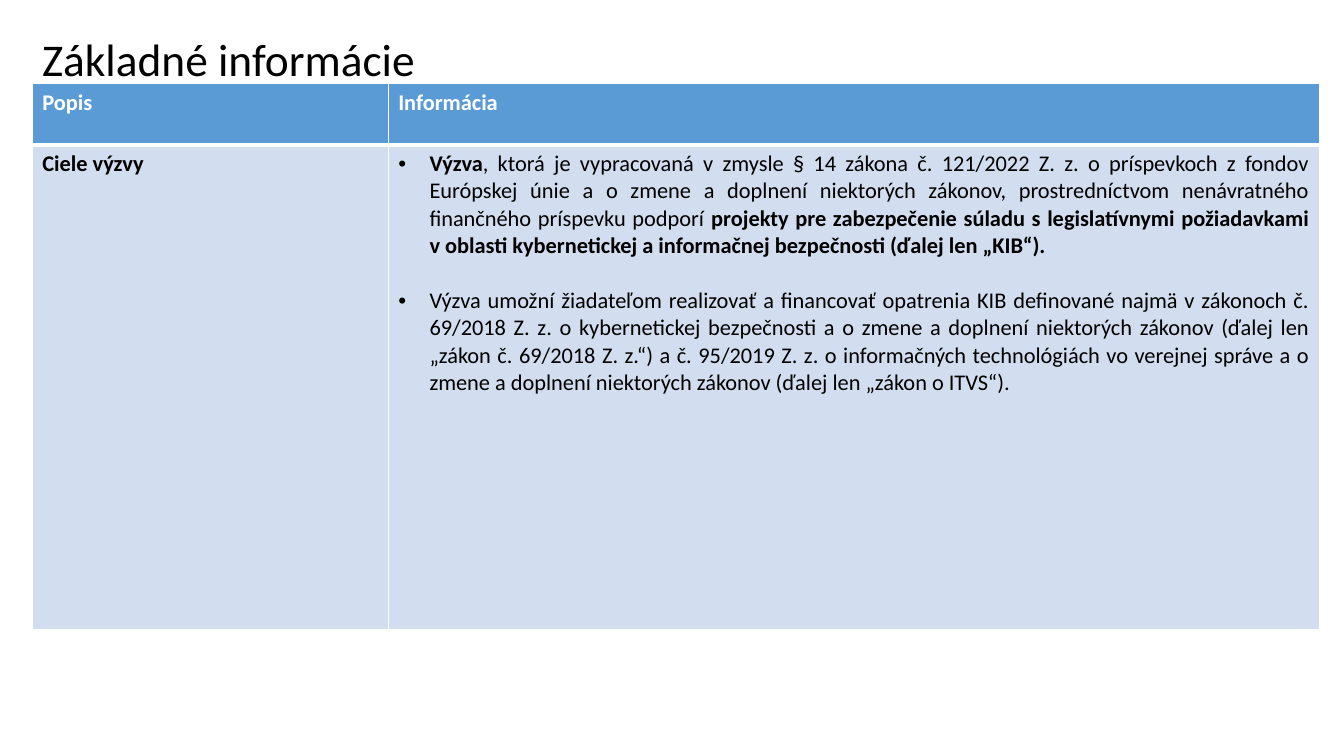
from lxml import etree
from pptx import Presentation
from pptx.dml.color import RGBColor
from pptx.enum.text import MSO_ANCHOR, PP_ALIGN
from pptx.oxml.ns import qn
from pptx.util import Pt

PX = 9144  # 100 px to the inch
LEFT, JUSTIFY = PP_ALIGN.LEFT, PP_ALIGN.JUSTIFY
MIDDLE = MSO_ANCHOR.MIDDLE
COLORS = {"text": "000000", "white": "FFFFFF", "header": "5B9BD5", "body": "D2DEEF"}

HEADINGS = ["Popis", "Informácia"]
TOPIC = "Ciele výzvy"
GOALS = [
    [
        ("Výzva", True),
        (", ktorá je vypracovaná v zmysle § 14 zákona č. 121/2022 Z. z. o príspevkoch "
         "z fondov Európskej únie a o zmene a doplnení niektorých zákonov, "
         "prostredníctvom nenávratného finančného príspevku podporí ", False),
        ("projekty pre zabezpečenie súladu s legislatívnymi požiadavkami v oblasti "
         "kybernetickej a informačnej bezpečnosti (ďalej len „KIB“).", True),
    ],
    [
        ("Výzva umožní žiadateľom realizovať a financovať opatrenia KIB definované "
         "najmä v zákonoch č. 69/2018 Z. z. o kybernetickej bezpečnosti a o zmene "
         "a doplnení niektorých zákonov (ďalej len „zákon č. 69/2018 Z. z.“) "
         "a č. 95/2019 Z. z. o informačných technológiách vo verejnej správe "
         "a o zmene a doplnení niektorých zákonov (ďalej len „zákon o ITVS“).", False),
    ],
]


class Deck:
    font = "Calibri"

    def __init__(self, width, height):
        self.prs = Presentation()
        self.prs.slide_width, self.prs.slide_height = width * PX, height * PX
        self.s = self.prs.slides.add_slide(self.prs.slide_layouts[6])

    def add_text(self, p, text, size=16, color="text", bold=False):
        r = p.add_run()
        r.text = text
        r.font.name, r.font.size, r.font.bold = self.font, Pt(size), bold
        r.font.color.rgb = RGBColor.from_string(COLORS[color])

    def bullet(self, p, indent):
        pPr = p._p.get_or_add_pPr()
        pPr.set("marL", str(indent * PX))
        pPr.set("indent", str(-indent * PX))
        etree.SubElement(pPr, qn("a:buFont"), typeface="Arial")
        etree.SubElement(pPr, qn("a:buChar"), char="•")

    def text_box(self, x, y, w, h, text, **fmt):
        tf = self.s.shapes.add_textbox(x * PX, y * PX, w * PX, h * PX).text_frame
        tf.word_wrap, tf.vertical_anchor = True, MIDDLE
        p = tf.paragraphs[0]
        p.alignment = LEFT
        self.add_text(p, text, **fmt)

    def table(self, x, y, widths, heights):
        frame = self.s.shapes.add_table(len(heights), len(widths), x * PX, y * PX,
                                        sum(widths) * PX, sum(heights) * PX)
        table = frame.table
        for column, width in zip(table.columns, widths):
            column.width = width * PX
        for row, height in zip(table.rows, heights):
            row.height = height * PX
        return table

    def cell(self, cell, fill, bottom=1):
        """Fill and border a cell and return its first paragraph."""
        cell.fill.solid()
        cell.fill.fore_color.rgb = RGBColor.from_string(COLORS[fill])
        tcPr = cell._tc.get_or_add_tcPr()
        for i, (side, width) in enumerate(zip("LRTB", (1, 1, 1, bottom))):
            ln = etree.Element(qn(f"a:ln{side}"), w=str(int(Pt(width))))
            solid = etree.SubElement(ln, qn("a:solidFill"))
            etree.SubElement(solid, qn("a:srgbClr"), val=COLORS["white"])
            tcPr.insert(i, ln)
        return cell.text_frame.paragraphs[0]


def main():
    deck = Deck(1333, 750)
    deck.text_box(32, 32, 1000, 51, "Základné informácie", size=32.4)
    table = deck.table(32, 83, widths=[353, 924], heights=[61, 481])
    for col, heading in enumerate(HEADINGS):
        p = deck.cell(table.cell(0, col), "header", bottom=3)
        deck.add_text(p, heading, color="white", bold=True)
    deck.add_text(deck.cell(table.cell(1, 0), "body"), TOPIC, bold=True)

    goals = table.cell(1, 1)
    p = deck.cell(goals, "body")
    for i, runs in enumerate(GOALS):
        if i:
            p = goals.text_frame.add_paragraph()
            p.space_before = Pt(19.5)
        p.alignment = JUSTIFY
        deck.bullet(p, 31)
        for text, bold in runs:
            deck.add_text(p, text, bold=bold)
    deck.prs.save("out.pptx")


if __name__ == "__main__":
    main()
